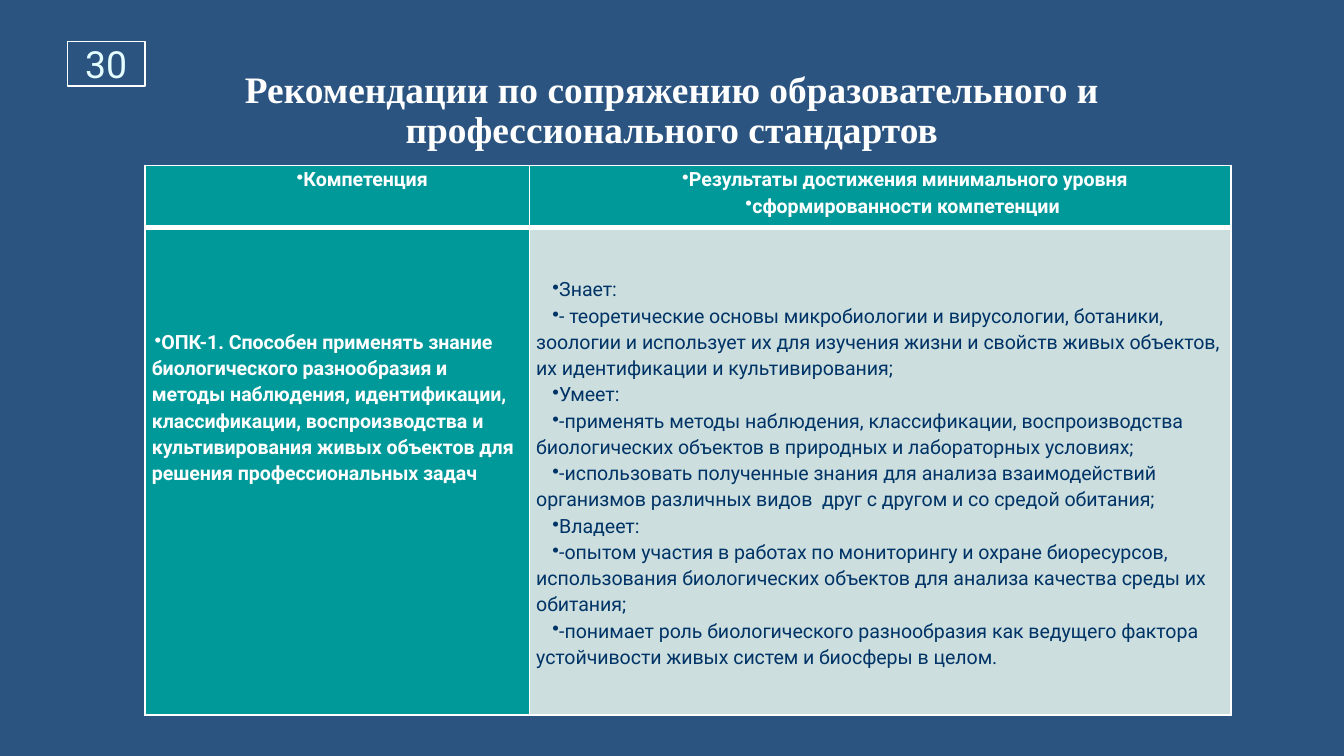
from dataclasses import dataclass
from lxml.etree import SubElement as Sub
from pptx import Presentation
from pptx.dml.color import RGBColor as Rgb
from pptx.enum.shapes import MSO_SHAPE as Form
from pptx.enum.text import MSO_ANCHOR as Anchor, PP_ALIGN as Align
from pptx.oxml.ns import qn
from pptx.util import Inches as In, Pt


@dataclass(frozen=True)
class Theme:
    back: str = "2B5481"
    white: str = "FFFFFF"
    pale: str = "E5FFFF"
    teal: str = "009999"
    mist: str = "CCDEDE"
    navy: str = "003366"
    body: str = "Roboto"
    serif: str = "Times New Roman"
    big: float = 20
    small: float = 10.5
    thin: float = 1
    thick: float = 3


T = Theme()
WIDE = 10
HIGH = WIDE * 9 / 16

TITLE = "Рекомендации по сопряжению образовательного и профессионального стандартов"
HEADS = [
    ["Компетенция"],
    ["Результаты достижения минимального уровня", "сформированности компетенции "],
]
SKILL = [
    "ОПК-1. Способен применять знание биологического разнообразия и методы "
    "наблюдения, идентификации, классификации, воспроизводства и "
    "культивирования живых объектов для решения профессиональных задач",
]
LEVELS = [
    "Знает:",
    "- теоретические основы микробиологии и вирусологии, ботаники, зоологии и "
    "использует их для изучения жизни и свойств живых объектов, их "
    "идентификации и культивирования;",
    "Умеет:",
    "-применять методы наблюдения, классификации, воспроизводства "
    "биологических объектов в природных и лабораторных условиях;",
    "-использовать полученные знания для анализа взаимодействий организмов "
    "различных видов  друг с другом и со средой обитания;",
    "Владеет:",
    "-опытом участия в работах по мониторингу и охране биоресурсов, "
    "использования биологических объектов для анализа качества среды их обитания;",
    "-понимает роль биологического разнообразия как ведущего фактора "
    "устойчивости живых систем и биосферы в целом.",
]


def put(item, form):
    for name, value in form.items():
        setattr(item, name, value)


def write(para, text, size, face, color, bold=False, **form):
    run = para.add_run()
    run.text = text
    put(run.font, {"size": Pt(size), "name": face, "bold": bold})
    run.font.color.rgb = Rgb.from_string(color)
    put(para, form)


def bullet(para, indent):
    props = para._p.get_or_add_pPr()
    props.set("marL", "0")
    props.set("indent", str(In(indent)))
    Sub(props, qn("a:buChar"), char="•")


def border(cell, widths):
    props = cell._tc.get_or_add_tcPr()
    for side, width in widths.items():
        line = Sub(props, qn(f"a:ln{side}"), w=str(Pt(width)))
        fill = Sub(line, qn("a:solidFill"))
        Sub(fill, qn("a:srgbClr"), val=T.white)


def fill_cell(cell, texts, fill, color, bold, indent, top, align, edges):
    put(cell, {"margin_left": In(0.05), "margin_right": In(0.05),
               "margin_top": In(top), "margin_bottom": 0})
    border(cell, {side: T.thin for side in "LRTB"} | edges)
    cell.fill.solid()
    cell.fill.fore_color.rgb = Rgb.from_string(fill)
    frame = cell.text_frame
    for n, text in enumerate(texts):
        para = frame.add_paragraph() if n else frame.paragraphs[0]
        write(para, text, T.small, T.body, color, bold,
              alignment=align, line_spacing=1.15, space_before=Pt(0))
        bullet(para, indent)


# Page number in a thin frame
def add_badge(slide, box):
    badge = slide.shapes.add_shape(Form.RECTANGLE, *map(In, box))
    badge.shadow.inherit = False
    badge.fill.background()
    badge.line.color.rgb = Rgb.from_string(T.white)
    badge.line.width = Pt(0.75)
    frame = badge.text_frame
    frame.vertical_anchor = Anchor.MIDDLE
    write(frame.paragraphs[0], "30", T.big, T.body, T.pale, alignment=Align.CENTER)


# Heading
def add_title(slide, box):
    frame = slide.shapes.add_textbox(*map(In, box)).text_frame
    put(frame, {"word_wrap": True, "vertical_anchor": Anchor.TOP})
    write(frame.paragraphs[0], TITLE, T.big, T.serif, T.white, True,
          alignment=Align.CENTER, line_spacing=0.9)


# Table of skills and levels
def add_grid(slide, box, cols, rows):
    table = slide.shapes.add_table(len(rows), len(cols), *map(In, box)).table
    for col, width in zip(table.columns, cols):
        col.width = In(box[2] * width / sum(cols))
    for row, height in zip(table.rows, rows):
        row.height = In(box[3] * height / sum(rows))
    for n, head in enumerate(HEADS):
        fill_cell(table.cell(0, n), head, T.teal, T.white, True, 0.37, 0,
                  Align.CENTER, {"B": T.thick})
    parts = [(SKILL, T.teal, T.white, True, 0.02, 0.75),
             (LEVELS, T.mist, T.navy, False, 0.12, 0.36)]
    for n, part in enumerate(parts):
        fill_cell(table.cell(1, n), *part, Align.LEFT, {"T": T.thick})


def main():
    deck = Presentation()
    put(deck, {"slide_width": In(WIDE), "slide_height": In(HIGH)})
    slide = deck.slides.add_slide(deck.slide_layouts[6])
    back = slide.background.fill
    back.solid()
    back.fore_color.rgb = Rgb.from_string(T.back)
    edge = WIDE * 0.05
    add_badge(slide, (edge, 0.31, 0.58, 0.33))
    add_title(slide, (edge, 0.48, WIDE - 2 * edge, 4.25))
    add_grid(slide, (1.08, 1.23, 8.08, 4.09), (2.86, 5.22), (0.46, 3.63))
    deck.save("out.pptx")


if __name__ == "__main__":
    main()
